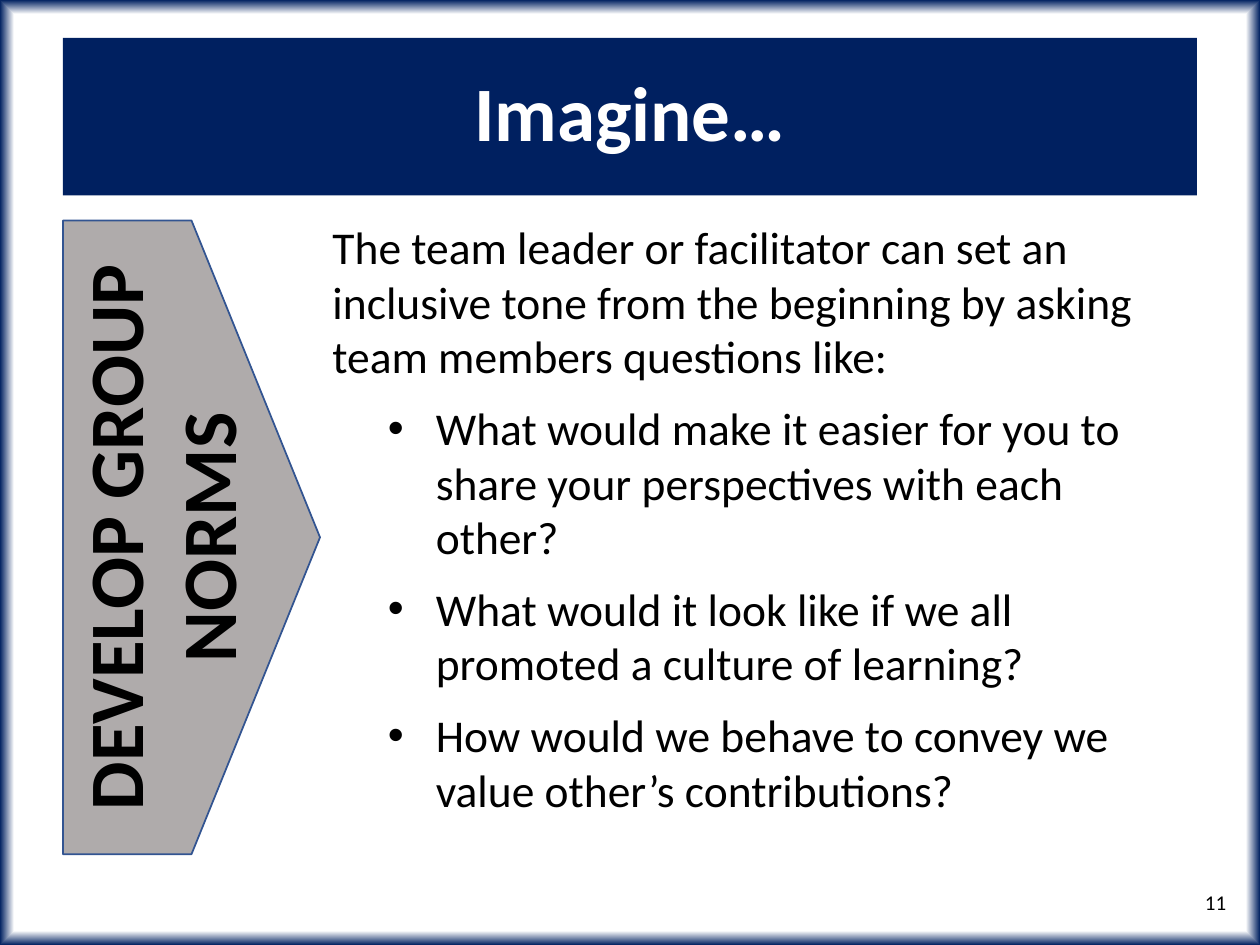
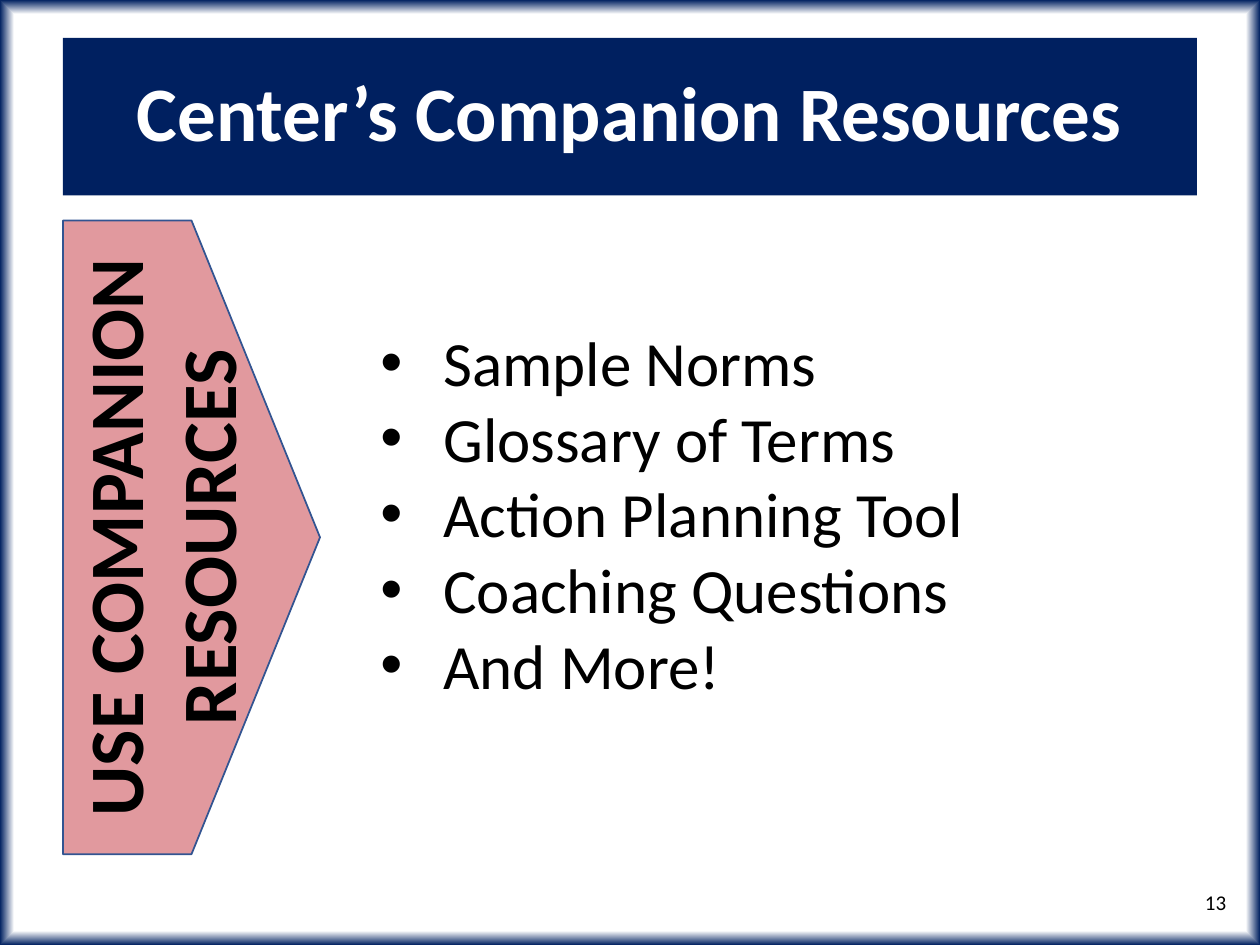
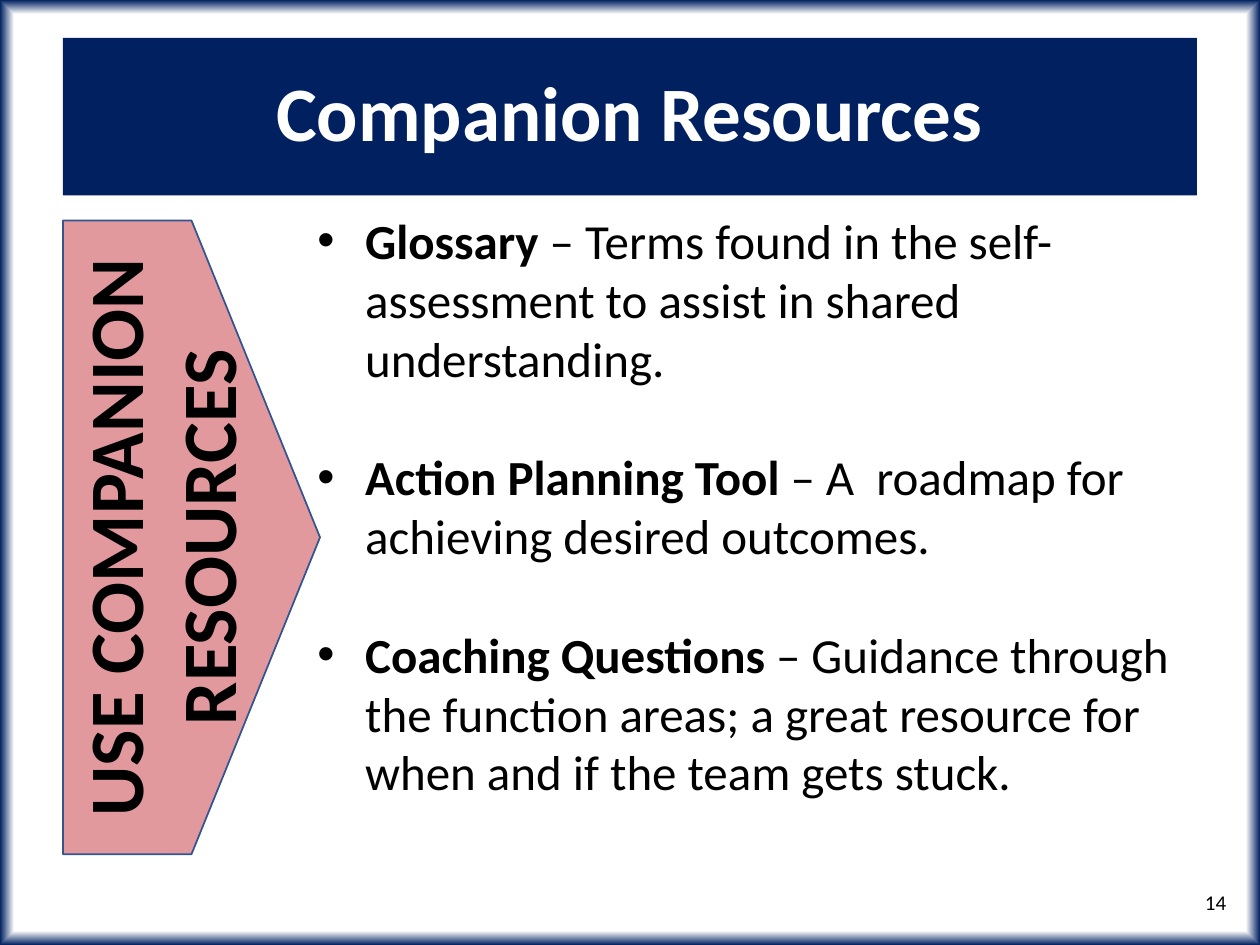
"""Build three slides on group norms and companion resources."""
from dataclasses import dataclass

from lxml import etree
from pptx import Presentation
from pptx import util as u
from pptx.dml.color import RGBColor
from pptx.enum import shapes, text
from pptx.oxml.ns import qn

FONT = "Calibri"
NAVY, WHITE, BLACK = "002060", "FFFFFF", "000000"
GREY, RED, OUTLINE = "AFABAB", "BD1D28", "325491"


@dataclass(frozen=True)
class Box:
    """Position and size in inches."""
    left: float
    top: float
    width: float
    height: float

    def lengths(self) -> list[u.Length]:
        """Return left, top, width and height as lengths."""
        return [u.Inches(v) for v in (self.left, self.top, self.width, self.height)]


@dataclass(frozen=True)
class Item:
    """A body paragraph with an optional bold lead."""
    words: str
    lead: str = ""
    bullet: bool = True


@dataclass(frozen=True)
class Page:
    """Content and layout of one slide."""
    title: str
    number: int
    step: str
    tint: str
    opacity: int
    body: Box
    size: int
    margin: float
    hanging: float
    gap: float
    items: tuple[Item, ...]


TITLE_BOX = Box(0.5, 0.3, 9, 1.25)
STEP_BOX = Box(0.5, 1.75, 2.04, 5.03)
NUMBER_BOX = Box(7.58, 6.96, 2.25, 0.4)

PAGES = (
    Page("Imagine…", 11, "DEVELOP GROUP NORMS", GREY, 100,
         Box(2.54, 1.69, 6.75, 5.28), 26, 0.82, 0.38, 9.8, (
             Item("The team leader or facilitator can set an inclusive tone from the "
                  "beginning by asking team members questions like:", bullet=False),
             Item("What would make it easier for you to share your perspectives "
                  "with each other?"),
             Item("What would it look like if we all promoted a culture of learning?"),
             Item("How would we behave to convey we value other’s contributions?"))),
    Page("Center’s Companion Resources", 13, "USE COMPANION RESOURCES", RED, 45,
         Box(2.92, 2.52, 6.75, 4), 36, 0.5, 0.5, 0, (
             Item("Sample Norms"),
             Item("Glossary of Terms"),
             Item("Action Planning Tool"),
             Item("Coaching Questions"),
             Item("And More!"))),
    Page("Companion Resources", 14, "USE COMPANION RESOURCES", RED, 45,
         Box(2.42, 1.62, 7.29, 5.21), 28, 0.38, 0.38, 34.2, (
             Item(" – Terms found in the self-assessment to assist in shared "
                  "understanding.", "Glossary"),
             Item("– A  roadmap for achieving desired outcomes.",
                  "Action Planning Tool "),
             Item("– Guidance through the function areas; a great resource for when "
                  "and if the team gets stuck.", "Coaching Questions "))),
)


def rgb(value: str) -> RGBColor:
    """Turn a hex string into a colour."""
    return RGBColor.from_string(value)


def add_run(p, words: str, *, size: int, color: str = BLACK, bold: bool = False) -> None:
    """Append formatted text to a paragraph."""
    r = p.add_run()
    r.text = words
    r.font.name = FONT
    r.font.size = u.Pt(size)
    r.font.bold = bold
    r.font.color.rgb = rgb(color)


def add_bullet(p, margin: float, hanging: float) -> None:
    """Give a paragraph a round bullet with a hanging indent."""
    ppr = p._p.get_or_add_pPr()
    ppr.set("marL", str(u.Inches(margin)))
    ppr.set("indent", str(-u.Inches(hanging)))
    etree.SubElement(ppr, qn("a:buFont")).set("typeface", "Arial")
    etree.SubElement(ppr, qn("a:buChar")).set("char", "•")


def add_block(slide, kind: shapes.MSO_SHAPE, box: Box, fill: str):
    """Add a filled shape without shadow or outline."""
    sp = slide.shapes.add_shape(kind, *box.lengths())
    sp.shadow.inherit = False
    sp.fill.solid()
    sp.fill.fore_color.rgb = rgb(fill)
    sp.line.fill.background()
    sp.text_frame.word_wrap = True
    sp.text_frame.vertical_anchor = text.MSO_ANCHOR.MIDDLE
    return sp


def add_title(slide, words: str) -> None:
    """Draw the title band."""
    sp = add_block(slide, shapes.MSO_SHAPE.RECTANGLE, TITLE_BOX, NAVY)
    p = sp.text_frame.paragraphs[0]
    p.alignment = text.PP_ALIGN.CENTER
    p.line_spacing = 0.9
    add_run(p, words, size=44, color=WHITE, bold=True)


def add_step(slide, words: str, tint: str, opacity: int) -> None:
    """Draw the side arrow with its upward label."""
    sp = add_block(slide, shapes.MSO_SHAPE.PENTAGON, STEP_BOX, tint)
    if opacity < 100:
        color = sp._element.spPr.find(f"{qn('a:solidFill')}/{qn('a:srgbClr')}")
        etree.SubElement(color, qn("a:alpha")).set("val", str(opacity * 1000))
    sp.line.color.rgb = rgb(OUTLINE)
    sp.line.width = u.Pt(1)
    tf = sp.text_frame
    tf._txBody.bodyPr.set("vert", "vert270")
    p = tf.paragraphs[0]
    p.alignment = text.PP_ALIGN.CENTER
    add_run(p, words, size=44, bold=True)


def add_number(slide, number: int) -> None:
    """Write the slide number at the lower right."""
    tf = slide.shapes.add_textbox(*NUMBER_BOX.lengths()).text_frame
    tf.word_wrap = True
    tf.vertical_anchor = text.MSO_ANCHOR.MIDDLE
    p = tf.paragraphs[0]
    p.alignment = text.PP_ALIGN.RIGHT
    add_run(p, str(number), size=12)


def add_body(slide, page: Page) -> None:
    """Write the body paragraphs."""
    tf = slide.shapes.add_textbox(*page.body.lengths()).text_frame
    tf.word_wrap = True
    for i, item in enumerate(page.items):
        p = tf.add_paragraph() if i else tf.paragraphs[0]
        if item.bullet:
            add_bullet(p, page.margin, page.hanging)
        if i and page.gap:
            p.space_before = u.Pt(page.gap)
        if item.lead:
            add_run(p, item.lead, size=page.size, bold=True)
        add_run(p, item.words, size=page.size)


def set_background(master) -> None:
    """Give every slide a white background with a glowing navy edge."""
    fill = master.background.fill
    fill.gradient()
    for stop, position, color in zip(fill.gradient_stops, (0.97, 1), (WHITE, NAVY)):
        stop.position = position
        stop.color.rgb = rgb(color)
    grad = master.element.find(f".//{qn('a:gradFill')}")
    grad.remove(grad.find(qn("a:lin")))
    shade = etree.SubElement(grad, qn("a:path"))
    shade.set("path", "shape")
    center = etree.SubElement(shade, qn("a:fillToRect"))
    for side in "ltrb":
        center.set(side, "50000")


def main() -> None:
    """Build and save the presentation."""
    prs = Presentation()
    prs.slide_width, prs.slide_height = u.Inches(10), u.Inches(7.5)
    set_background(prs.slide_master)
    for page in PAGES:
        slide = prs.slides.add_slide(prs.slide_layouts[6])
        add_title(slide, page.title)
        add_number(slide, page.number)
        add_step(slide, page.step, page.tint, page.opacity)
        add_body(slide, page)
    prs.save("out.pptx")


if __name__ == "__main__":
    main()
